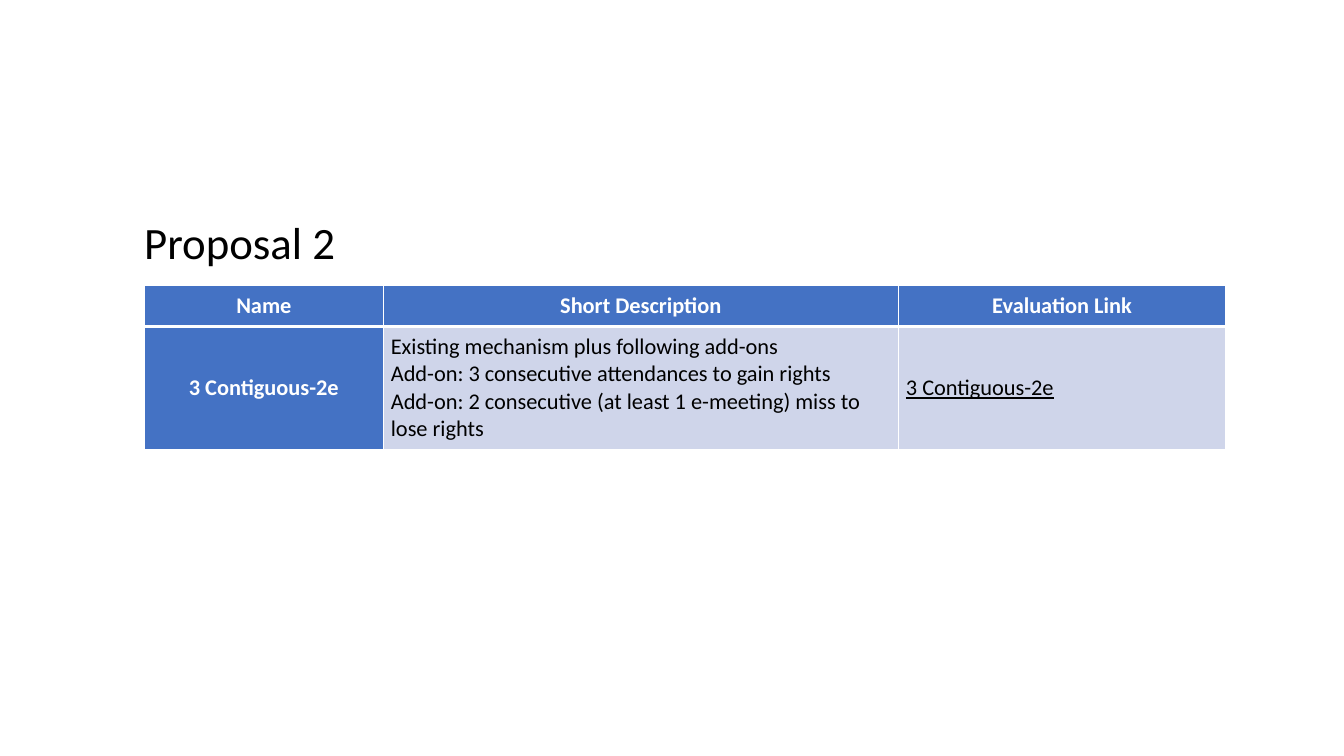
from lxml import etree
from pptx import Presentation, util as u
from pptx.dml.color import RGBColor
from pptx.enum import text
from pptx.oxml.ns import qn

TITLE = "Proposal 2"
ROWS = [
    [["Name"], ["Short Description"], ["Evaluation Link"]],
    [
        ["3 Contiguous-2e"],
        [
            "Existing mechanism plus following add-ons",
            "Add-on: 3 consecutive attendances to gain rights",
            "Add-on: 2 consecutive (at least 1 e-meeting) miss to lose rights",
        ],
        ["3 Contiguous-2e"],
    ],
]
WIDTHS = [6.02, 12.98, 8.25]
HEIGHTS = [1.03, 3.09]
COLORS = {"head": "4472C4", "body": "CFD5EA", "white": "FFFFFF", "black": "000000"}
FONT = "Calibri"


def color(name):
    return RGBColor.from_string(COLORS[name])


def add_run(para, words, size, tint, bold=False, under=False):
    run = para.add_run()
    run.text = words
    font = run.font
    font.name, font.size = FONT, u.Pt(size)
    font.bold, font.underline = bold, under
    font.color.rgb = color(tint)


def add_edge(cell, side, width):
    props = cell._tc.get_or_add_tcPr()
    line = etree.SubElement(props, qn(f"a:ln{side}"), w=str(u.Pt(width)))
    fill = etree.SubElement(line, qn("a:solidFill"))
    etree.SubElement(fill, qn("a:srgbClr"), val=COLORS["white"])


def fill_cell(cell, lines, row, col):
    head = row == 0 or col == 0
    widths = {"L": 1, "R": 1, "T": 3 if row else 1, "B": 1 if row else 3}
    for side, width in widths.items():
        add_edge(cell, side, width)
    cell.fill.solid()
    cell.fill.fore_color.rgb = color("head" if head else "body")
    cell.vertical_anchor = text.MSO_ANCHOR.MIDDLE
    cell.margin_left = cell.margin_right = u.Cm(0.19)
    cell.margin_top = cell.margin_bottom = 0
    frame = cell.text_frame
    for i, words in enumerate(lines):
        para = frame.add_paragraph() if i else frame.paragraphs[0]
        para.alignment = text.PP_ALIGN.CENTER if head else text.PP_ALIGN.LEFT
        add_run(para, words, 16, "white" if head else "black", head, not head and col == 2)


def add_title(slide):
    title = slide.shapes.title
    title.left, title.top = u.Cm(3.38), u.Cm(5.28)
    title.width, title.height = u.Cm(5.38), u.Cm(1.63)
    frame = title.text_frame
    frame.word_wrap = False
    frame.auto_size = text.MSO_AUTO_SIZE.SHAPE_TO_FIT_TEXT
    frame.vertical_anchor = text.MSO_ANCHOR.TOP
    para = frame.paragraphs[0]
    para.alignment = text.PP_ALIGN.LEFT
    para.line_spacing = 1.0
    add_run(para, TITLE, 32, "black")


def add_grid(slide):
    frame = slide.shapes.add_table(
        len(HEIGHTS), len(WIDTHS), u.Cm(3.64), u.Cm(7.2),
        u.Cm(sum(WIDTHS)), u.Cm(sum(HEIGHTS)))
    table = frame.table
    for column, width in zip(table.columns, WIDTHS):
        column.width = u.Cm(width)
    for line, height in zip(table.rows, HEIGHTS):
        line.height = u.Cm(height)
    for r, cells in enumerate(ROWS):
        for c, lines in enumerate(cells):
            fill_cell(table.cell(r, c), lines, r, c)


def main():
    deck = Presentation()
    deck.slide_width, deck.slide_height = u.Cm(33.87), u.Cm(19.05)
    slide = deck.slides.add_slide(deck.slide_layouts[5])
    add_grid(slide)
    add_title(slide)
    deck.save("out.pptx")


if __name__ == "__main__":
    main()
